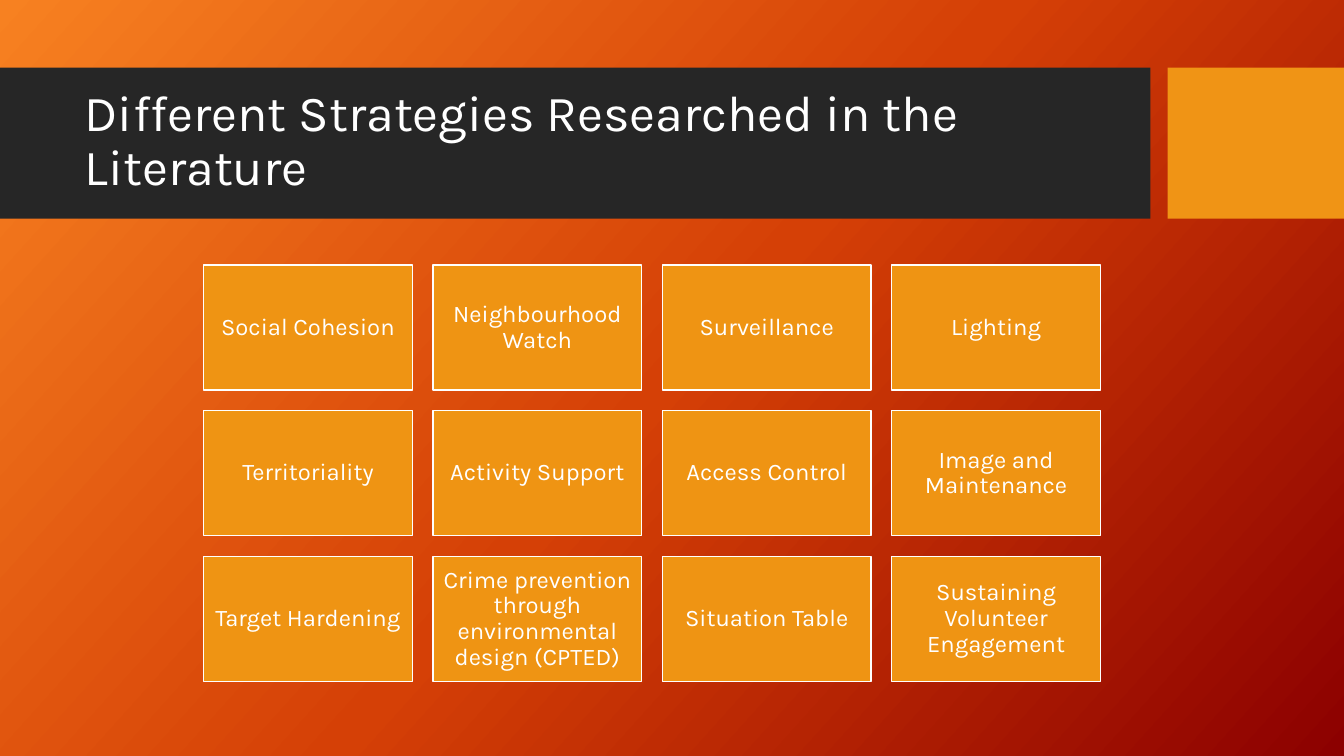
from copy import deepcopy
from pptx import Presentation
from pptx.dml.color import RGBColor as Rgb
from pptx.enum.shapes import MSO_SHAPE as Shape
from pptx.enum.text import MSO_ANCHOR as Anchor, MSO_AUTO_SIZE as Auto, PP_ALIGN as Align
from pptx.oxml.ns import qn
from pptx.util import Inches, Pt

TITLE = "Different Strategies Researched in the Literature"
ROWS = [
    ["Social Cohesion", "Neighbourhood Watch", "Surveillance", "Lighting"],
    ["Territoriality", "Activity Support", "Access Control", "Image and Maintenance"],
    ["Target Hardening", "Crime prevention through environmental design (CPTED)",
     "Situation Table", "Sustaining Volunteer Engagement"],
]
HUES = {"band": "262626", "accent": "F09415", "tile": "EF9413", "white": "FFFFFF"}
GLOW = [(0, "F78121"), (0.5, "D54006"), (1, "8C0000")]
BARS = [(0, 11.41, "band"), (11.58, 1.75, "accent")]
FONT = "Karla"
LEFT, TOP = 2.02, 2.63
WIDE, HIGH = 2.07, 1.24
GAP = 0.205


def paint(slide):
    fill = slide.background.fill
    fill.gradient()
    fill.gradient_angle = 360 - 42
    stops = next(slide.element.iter(qn("a:gsLst")))
    stops.insert(1, deepcopy(stops[0]))
    for stop, (place, hue) in zip(fill.gradient_stops, GLOW):
        stop.position = place
        stop.color.rgb = Rgb.from_string(hue)


def add_box(slide, left, top, wide, high, hue):
    box = slide.shapes.add_shape(
        Shape.RECTANGLE, Inches(left), Inches(top), Inches(wide), Inches(high))
    box.shadow.inherit = False
    box.fill.solid()
    box.fill.fore_color.rgb = Rgb.from_string(HUES[hue])
    box.line.fill.background()
    return box


def write(box, text, size, align, inset):
    frame = box.text_frame
    frame.text = text
    frame.word_wrap = True
    frame.auto_size = Auto.NONE
    frame.vertical_anchor = Anchor.MIDDLE
    frame.margin_left = frame.margin_right = Inches(inset[0])
    frame.margin_top = frame.margin_bottom = Inches(inset[1])
    para = frame.paragraphs[0]
    para.alignment = align
    para.line_spacing = 0.9
    para.font.name = FONT
    para.font.size = Pt(size)
    para.font.color.rgb = Rgb.from_string(HUES["white"])


def main():
    deck = Presentation()
    deck.slide_width, deck.slide_height = Inches(13.33), Inches(7.5)
    slide = deck.slides.add_slide(deck.slide_layouts[5])
    paint(slide)

    for left, wide, hue in BARS:
        add_box(slide, left, 0.67, wide, 1.5, hue)

    title = slide.shapes.title
    title.left, title.top = Inches(0.74), Inches(0.82)
    title.width, title.height = Inches(10.51), Inches(1.18)
    write(title, TITLE, 36, Align.LEFT, (0.1, 0.05))
    slide.shapes.element.append(title.element)

    for row, names in enumerate(ROWS):
        for col, name in enumerate(names):
            left = LEFT + col * (WIDE + GAP)
            top = TOP + row * (HIGH + GAP)
            tile = add_box(slide, left, top, WIDE, HIGH, "tile")
            tile.line.color.rgb = Rgb.from_string(HUES["white"])
            tile.line.width = Pt(1)
            write(tile, name, 17, Align.CENTER, (0.07, 0.07))

    deck.save("out.pptx")


if __name__ == "__main__":
    main()
